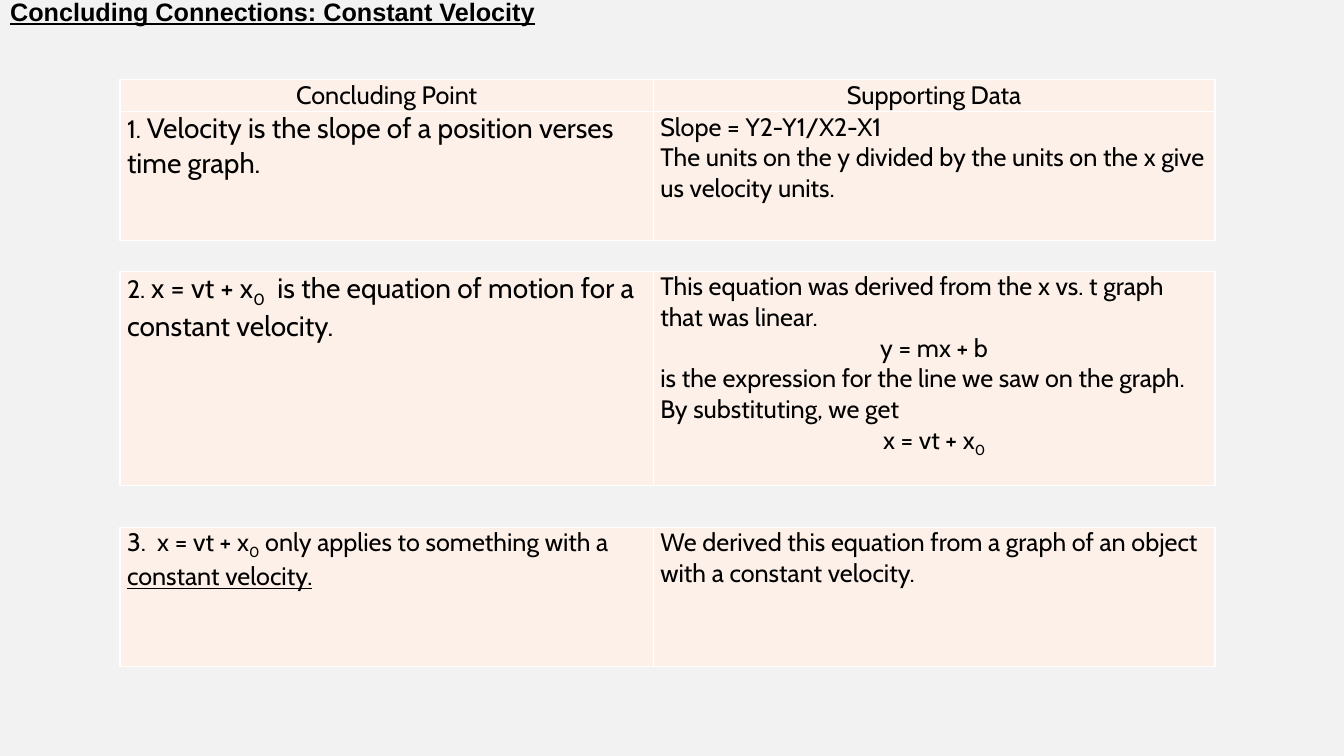
from lxml import etree
from pptx import Presentation
from pptx.dml.color import RGBColor
from pptx.enum.text import MSO_ANCHOR, MSO_AUTO_SIZE, PP_ALIGN
from pptx.oxml.ns import qn
from pptx.util import Inches, Pt

LEFT, CENTER = PP_ALIGN.LEFT, PP_ALIGN.CENTER
MIDDLE, TOP = MSO_ANCHOR.MIDDLE, MSO_ANCHOR.TOP
NO_FIT = MSO_AUTO_SIZE.NONE
PLAIN, SUB, UNDERLINE = "plain", "sub", "underline"

theme = {
    "page": RGBColor.from_string("F2F2F2"),
    "cell": RGBColor.from_string("FDF0E8"),
    "text": RGBColor.from_string("000000"),
    "border": "FFFFFF",
    "title_font": "Arial",
    "body_font": "Cabin",
    "normal": 18,
    "large": 20,
}
NORMAL, LARGE = theme["normal"], theme["large"]

# Table grid, in inches
TABLE_LEFT = 1.19
COLUMNS = [5.29, 5.57]


def apply_format(target, values):
    for name, value in values.items():
        setattr(target, name, value)


def write_span(para, text, size, font, style=PLAIN, bold=False):
    span = para.add_run()
    span.text = text
    apply_format(span.font, {"name": font, "size": Pt(size), "bold": bold,
                             "underline": style == UNDERLINE})
    span.font.color.rgb = theme["text"]
    if style == SUB:
        span.font._element.set("baseline", "-25000")


# Each table: top, row heights, rows of cells; a cell lists (alignment, spans)
tables = [
    (0.79, [0.32, 1.28], [
        [[(CENTER, [("Concluding Point", NORMAL)])],
         [(CENTER, [("Supporting Data", NORMAL)])]],
        [[(LEFT, [("1. ", NORMAL),
                  ("Velocity is the slope of a position verses time graph.", LARGE)])],
         [(LEFT, [("Slope = Y2-Y1/X2-X1", NORMAL)]),
          (LEFT, [("The units on the y divided by the units on the x give "
                   "us velocity units.", NORMAL)])]],
    ]),
    (2.69, [2.13], [
        [[(LEFT, [("2. ", NORMAL), ("x = vt + x", LARGE), ("0", LARGE, SUB),
                  ("  is the equation of motion for a constant velocity.", LARGE)])],
         [(LEFT, [("This equation was derived from the x vs. t graph "
                   "that was linear.", NORMAL)]),
          (CENTER, [("y = mx + b", NORMAL)]),
          (LEFT, [("is the expression for the line we saw on the graph.  "
                   "By substituting, we get", NORMAL)]),
          (CENTER, [("x = vt + x", NORMAL), ("0", NORMAL, SUB)])]],
    ]),
    (5.23, [1.38], [
        [[(LEFT, [("3.  x = vt + x", NORMAL), ("0", NORMAL, SUB),
                  (" only applies to something with a ", NORMAL),
                  ("constant velocity.", NORMAL, UNDERLINE)])],
         [(LEFT, [("We derived this equation from a graph of an object "
                   "with a constant velocity.", NORMAL)])]],
    ]),
]

# Page
deck = Presentation()
deck.slide_width, deck.slide_height = Inches(13.33), Inches(7.5)
page = deck.slides.add_slide(deck.slide_layouts[5])
page.background.fill.solid()
page.background.fill.fore_color.rgb = theme["page"]

# Title, raised to the top edge by its bottom margin
title = page.shapes.title
apply_format(title, {"left": 0, "top": 0, "width": deck.slide_width,
                     "height": Inches(0.5)})
apply_format(title.text_frame, {
    "auto_size": NO_FIT, "word_wrap": True, "vertical_anchor": MIDDLE,
    "margin_left": Inches(0.1), "margin_top": 0, "margin_bottom": Inches(0.28)})
heading = title.text_frame.paragraphs[0]
heading.alignment = LEFT
write_span(heading, "Concluding Connections: Constant Velocity", NORMAL,
           theme["title_font"], UNDERLINE, bold=True)

# Tables
for top, heights, rows in tables:
    frame = page.shapes.add_table(
        len(rows), len(COLUMNS), Inches(TABLE_LEFT), Inches(top),
        Inches(sum(COLUMNS)), Inches(sum(heights)))
    table = frame.table
    apply_format(table, {"first_row": False, "horz_banding": False})
    for column, width in zip(table.columns, COLUMNS):
        column.width = Inches(width)
    for row, height in zip(table.rows, heights):
        row.height = Inches(height)

    for row, contents in zip(table.rows, rows):
        for cell, paragraphs in zip(row.cells, contents):
            apply_format(cell, {
                "margin_left": Inches(0.07), "margin_right": Inches(0.07),
                "margin_top": 0, "margin_bottom": 0, "vertical_anchor": TOP})

            # White borders, then fill
            properties = cell._tc.get_or_add_tcPr()
            for side in ("a:lnL", "a:lnR", "a:lnT", "a:lnB"):
                line = etree.SubElement(properties, qn(side), w=str(Pt(1)))
                paint = etree.SubElement(line, qn("a:solidFill"))
                etree.SubElement(paint, qn("a:srgbClr"), val=theme["border"])
            cell.fill.solid()
            cell.fill.fore_color.rgb = theme["cell"]

            # Text
            for index, (alignment, spans) in enumerate(paragraphs):
                box = cell.text_frame
                para = box.add_paragraph() if index else box.paragraphs[0]
                para.alignment = alignment
                for text, size, *style in spans:
                    write_span(para, text, size, theme["body_font"], *style)

deck.save("out.pptx")
